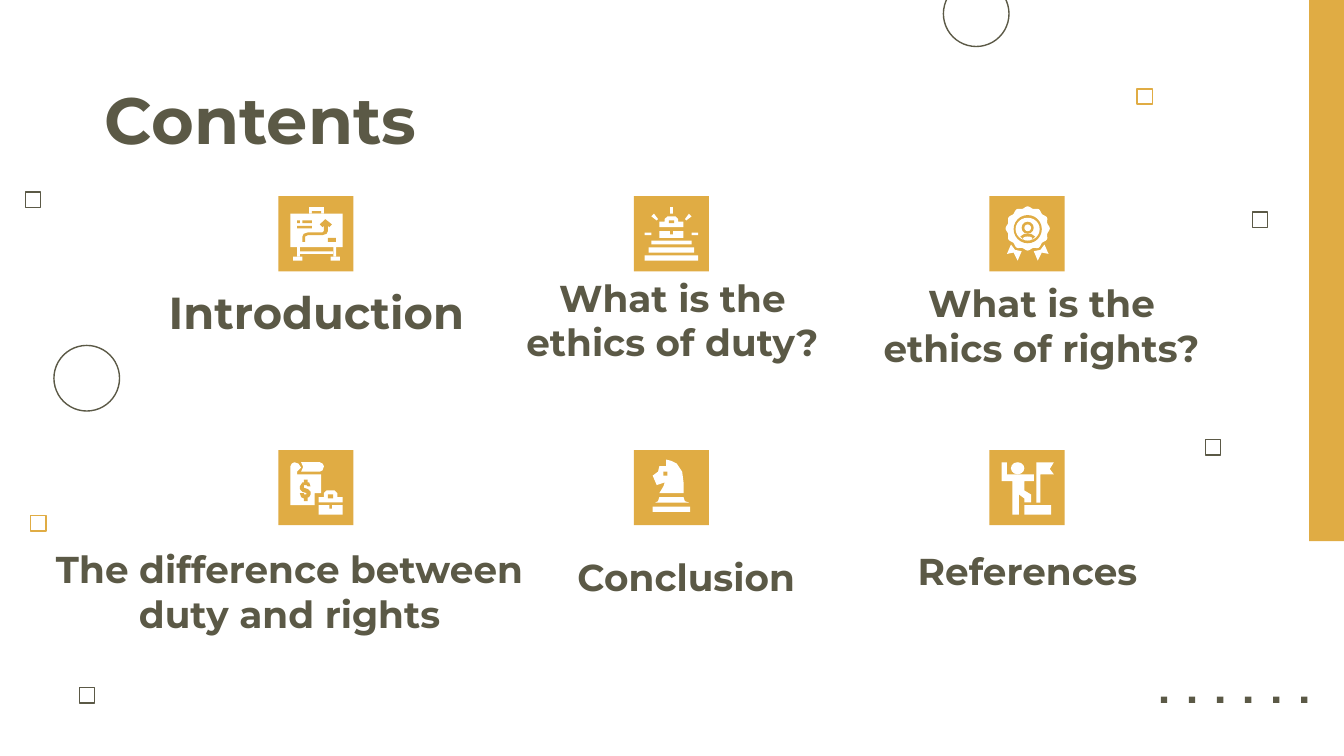
from dataclasses import dataclass
from math import cos, pi, sin

from pptx import Presentation
from pptx.dml.color import RGBColor
from pptx.enum.shapes import MSO_SHAPE
from pptx.enum.text import MSO_ANCHOR, MSO_AUTO_SIZE, PP_ALIGN
from pptx.util import Cm, Pt

RECTANGLE, OVAL = MSO_SHAPE.RECTANGLE, MSO_SHAPE.OVAL
TOP, BOTTOM = MSO_ANCHOR.TOP, MSO_ANCHOR.BOTTOM
LEFT, CENTER = PP_ALIGN.LEFT, PP_ALIGN.CENTER
NO_AUTOFIT = MSO_AUTO_SIZE.NONE


@dataclass(frozen=True)
class Theme:
    gold: RGBColor = RGBColor(0xE0, 0xAC, 0x44)
    olive: RGBColor = RGBColor(0x5B, 0x59, 0x46)
    white: RGBColor = RGBColor(0xFF, 0xFF, 0xFF)
    font: str = "Montserrat"
    title: Pt = Pt(35)
    large: Pt = Pt(24)
    heading: Pt = Pt(20)
    outline: Pt = Pt(0.75)


THEME = Theme()
GOLD, OLIVE, WHITE = THEME.gold, THEME.olive, THEME.white

TILE = Cm(1.42)
TILE_LEFT, TILE_TOP = Cm(5.26), Cm(3.71)
COLUMN_STEP, ROW_STEP = Cm(6.72), Cm(4.8)
UNIT = TILE / 56  # icons are drawn on a 56 x 56 grid
PRECISION = 10


def mirrored(points, axis):
    return [(2 * axis - x, y) for x, y in points]


def scalloped_disc(x, y, radius, lobes=12, depth=0.7, steps=120):
    angles = [2 * pi * step / steps for step in range(steps)]
    radii = [radius + depth * cos(lobes * angle) for angle in angles]
    return [(x + r * sin(a), y - r * cos(a)) for r, a in zip(radii, angles)]


def briefcase(x, y, lid, gap, body):
    """Icon parts of a case 18 units wide: handled lid, gap, body with a clasp."""
    outline = [(0, lid), (0, lid - 4), (4, lid - 4), (4, 2), (6, 0),
               (12, 0), (14, 2), (14, lid - 4), (18, lid - 4), (18, lid)]
    return [(WHITE, [(x + dx, y + dy) for dx, dy in outline]),
            (GOLD, RECTANGLE, x + 7, y + 3, 4, lid - 6),
            (WHITE, RECTANGLE, x, y + lid + gap, 18, body),
            (GOLD, RECTANGLE, x + 8, y + lid + gap, 2, 2.5)]


RAY = [(15, 13), (13, 15), (17, 18), (18, 17)]
RIBBON = [(16, 36), (13, 43), (18, 42), (21, 48), (24, 41), (19, 40)]

# A part is (colour, points) or (colour, preset, left, top, width, height).
BOARD = [
    (WHITE, RECTANGLE, 23, 8, 11, 5), (GOLD, RECTANGLE, 25, 11, 7, 2),
    (WHITE, RECTANGLE, 9, 13, 39, 25),
    (GOLD, RECTANGLE, 14, 18, 2, 2), (GOLD, RECTANGLE, 18, 18, 7, 2),
    (GOLD, RECTANGLE, 14, 22, 11, 2), (GOLD, RECTANGLE, 37, 31, 6, 3),
    (GOLD, [(35, 17), (40, 21), (38, 23), (37, 22), (37, 26), (36, 28), (33, 29),
            (22, 29), (20, 30), (20, 34), (18, 34), (18, 30), (19, 28), (22, 27),
            (33, 27), (34, 26), (34, 22), (33, 23), (31, 21)]),
    (WHITE, RECTANGLE, 14, 38, 2, 7), (WHITE, RECTANGLE, 41, 38, 2, 7),
    (WHITE, RECTANGLE, 16, 41, 25, 2),
    (WHITE, RECTANGLE, 11, 45, 7, 3), (WHITE, RECTANGLE, 39, 45, 7, 3),
]
STAIRS = [
    (WHITE, RECTANGLE, 27, 8, 2, 5),
    (WHITE, RECTANGLE, 8, 27, 5, 2), (WHITE, RECTANGLE, 43, 27, 5, 2),
    (WHITE, RAY), (WHITE, mirrored(RAY, 28)),
    (WHITE, RECTANGLE, 8, 44, 40, 4), (WHITE, RECTANGLE, 11, 38, 34, 4),
    (WHITE, RECTANGLE, 13, 33, 30, 3), *briefcase(19, 15, 8, 3, 5),
]
BADGE = [
    (WHITE, scalloped_disc(28.5, 24, 15.8)),
    (GOLD, OVAL, 18, 14, 21, 21), (WHITE, OVAL, 19.5, 16, 18, 17),
    (GOLD, OVAL, 24, 19, 9, 9),
    (GOLD, [(23, 30), (26, 28), (31, 28), (34, 30), (31, 33), (26, 33)]),
    (WHITE, OVAL, 26, 21, 5, 5), (WHITE, OVAL, 25, 30, 7, 3),
    (WHITE, RIBBON), (WHITE, mirrored(RIBBON, 28.5)),
]
SCROLL = [
    (WHITE, [(17, 9), (31, 9), (33, 10), (34, 12), (33, 15), (31, 16),
             (17, 16), (18.5, 12.5)]),
    (WHITE, [(12, 9), (10, 10), (9, 12), (9, 41), (27, 41), (27, 32), (32, 32),
             (32, 18), (14, 18), (14, 16), (17, 13), (15, 10)]),
    (GOLD, RECTANGLE, 19, 22, 3, 3), (GOLD, RECTANGLE, 19, 35, 3, 3),
    (GOLD, [(24, 27), (23, 24), (18, 24), (16, 27), (16, 29), (18, 31), (21, 32),
            (21, 33), (19, 33), (19, 32), (16, 32), (17, 35), (19, 36), (23, 35),
            (24, 33), (24, 31), (22, 29), (19, 28), (19, 26), (21, 26), (22, 27)]),
    *briefcase(30, 30, 9, 2, 7),
]
KNIGHT = [
    (WHITE, [(24, 7), (24, 12), (19, 12), (18, 16), (14, 19), (17, 26), (23, 24),
             (22, 27), (19, 32), (37, 32), (37, 24), (36, 16), (32, 10), (28, 8)]),
    (GOLD, RECTANGLE, 22, 16, 3, 3),
    (WHITE, [(19, 35), (37, 35), (38, 38), (41, 39), (16, 39), (18, 38)]),
    (WHITE, RECTANGLE, 14, 42, 28, 4),
]
CLIMBER = [
    (WHITE, OVAL, 16, 9, 10, 9), (WHITE, RECTANGLE, 26, 41, 20, 7),
    (WHITE, [(9, 9), (9, 23), (17, 23), (17, 48), (22, 48), (22, 33), (26, 36),
             (26, 39), (31, 39), (31, 33), (26, 30), (26, 23), (33, 23), (33, 18),
             (13, 18), (13, 9)]),
    (WHITE, [(35, 9), (35, 39), (38, 39), (38, 18), (48, 18), (45, 14), (48, 9)]),
]

# Icon, heading, size, then left, top and width of the heading in cm.
TOPICS = [
    (BOARD, "Introduction", THEME.large, 2.87, 5.23, 6.22),
    (STAIRS, "What is the ethics of duty?", THEME.heading, 9.6, 5.72, 6.22),
    (BADGE, "What is the ethics of rights?", THEME.heading, 16.08, 5.82, 7.21),
    (SCROLL, "The difference between duty and rights", THEME.heading, 0.61, 10.85, 9.73),
    (KNIGHT, "Conclusion", THEME.heading, 9.86, 10.16, 6.22),
    (CLIMBER, "References", THEME.heading, 16.31, 10.03, 6.22),
]
SMALL_SQUARES = [
    (21.49, 1.68, GOLD), (22.78, 8.31, OLIVE), (23.67, 4.01, OLIVE),
    (0.58, 9.75, GOLD), (0.48, 3.63, OLIVE), (1.5, 13, OLIVE),
]
CIRCLES = [(1.02, 6.53), (17.83, -0.36)]


def paint(shape, fill=None, line=None):
    shape.shadow.inherit = False
    if fill is None:
        shape.fill.background()
    else:
        shape.fill.solid()
        shape.fill.fore_color.rgb = fill
    if line is None:
        shape.line.fill.background()
    else:
        shape.line.color.rgb = line
        shape.line.width = THEME.outline


def add_preset(slide, preset, left, top, width, height, fill=None, line=None):
    box = [round(length) for length in (left, top, width, height)]
    paint(slide.shapes.add_shape(preset, *box), fill, line)


def add_polygon(slide, left, top, points, fill):
    scaled = [(x * PRECISION, y * PRECISION) for x, y in points]
    builder = slide.shapes.build_freeform(*scaled[0], scale=UNIT / PRECISION)
    builder.add_line_segments(scaled[1:], close=True)
    paint(builder.convert_to_shape(left, top), fill)


def add_icon(slide, left, top, parts):
    add_preset(slide, RECTANGLE, left, top, TILE, TILE, GOLD)
    for colour, outline, *box in parts:
        if box:
            x, y, width, height = [value * UNIT for value in box]
            add_preset(slide, outline, left + x, top + y, width, height, colour)
        else:
            add_polygon(slide, left, top, outline, colour)


def write(shape, text, size, alignment, anchor):
    frame = shape.text_frame
    frame.text = text
    frame.word_wrap = True
    frame.auto_size = NO_AUTOFIT
    frame.vertical_anchor = anchor
    frame.margin_left = frame.margin_right = Cm(0.25)
    frame.margin_top = frame.margin_bottom = Cm(0.25)
    paragraph = frame.paragraphs[0]
    paragraph.alignment = alignment
    font = paragraph.runs[0].font
    font.name, font.size, font.bold = THEME.font, size, True
    font.color.rgb = OLIVE


def add_title(slide, text):
    title = slide.shapes.title
    title.left, title.top, title.width, title.height = Cm(1.73), Cm(1.24), Cm(21.95), Cm(1.6)
    write(title, text, THEME.title, LEFT, TOP)


def add_topics(slide):
    for index, (icon, text, size, left, top, width) in enumerate(TOPICS):
        row, column = divmod(index, 3)
        add_icon(slide, TILE_LEFT + column * COLUMN_STEP, TILE_TOP + row * ROW_STEP, icon)
        heading = slide.shapes.add_textbox(Cm(left), Cm(top), Cm(width), Cm(1.42))
        write(heading, text, size, CENTER, BOTTOM)


def add_decoration(slide):
    add_preset(slide, RECTANGLE, Cm(24.74), 0, Cm(0.66), Cm(10.23), GOLD)
    for left, top in CIRCLES:
        add_preset(slide, OVAL, Cm(left), Cm(top), Cm(1.24), Cm(1.24), line=OLIVE)
    for left, top, colour in SMALL_SQUARES:
        add_preset(slide, RECTANGLE, Cm(left), Cm(top), Cm(0.29), Cm(0.29), line=colour)
    for index in range(6):
        left = Cm(21.94) + index * Cm(0.53)
        add_preset(slide, RECTANGLE, left, Cm(13.17), Cm(0.12), Cm(0.12), OLIVE)


def main():
    presentation = Presentation()
    presentation.slide_width, presentation.slide_height = Cm(25.4), Cm(14.29)
    slide = presentation.slides.add_slide(presentation.slide_layouts[5])
    add_title(slide, "Contents")
    add_topics(slide)
    add_decoration(slide)
    presentation.save("out.pptx")


if __name__ == "__main__":
    main()
